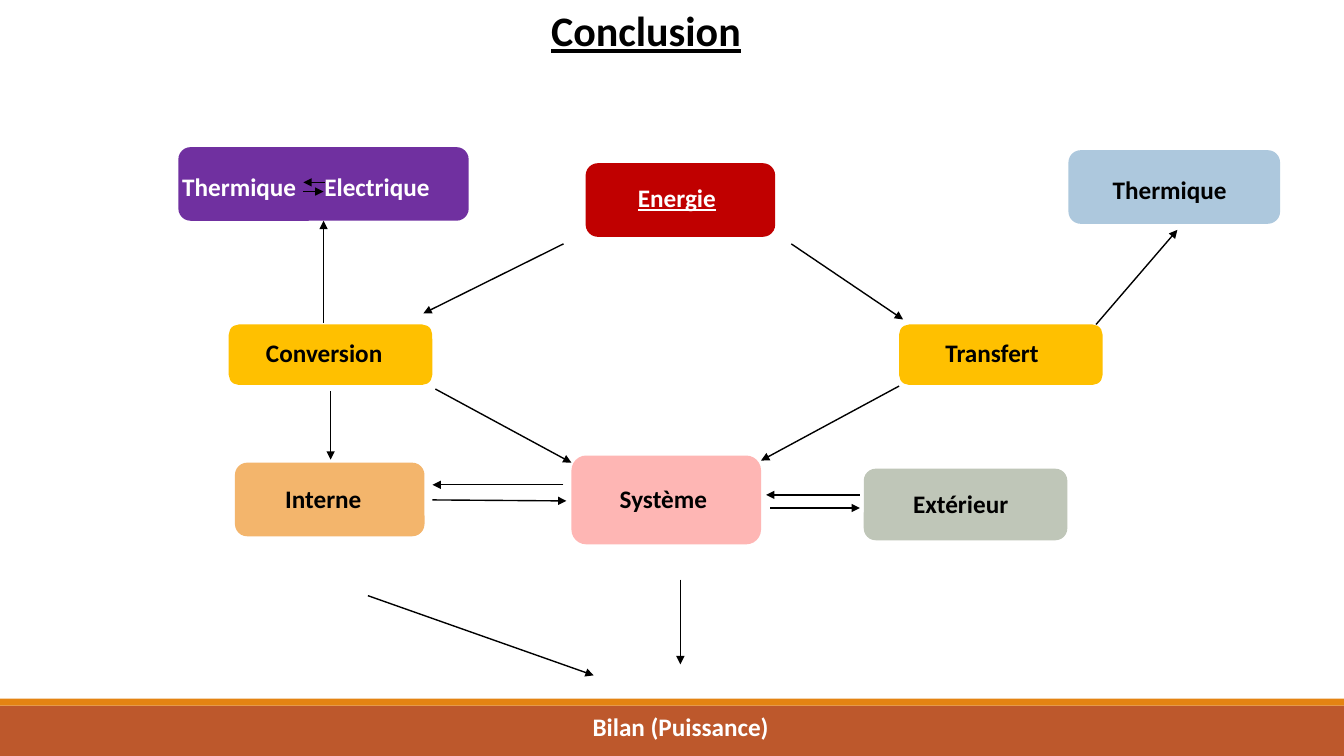
from pptx import Presentation
from pptx.util import Pt
from pptx.dml.color import RGBColor
from pptx.enum.shapes import MSO_CONNECTOR, MSO_SHAPE
from lxml import etree

LINE = MSO_CONNECTOR.STRAIGHT
RECT = MSO_SHAPE.RECTANGLE
ROUND = MSO_SHAPE.ROUNDED_RECTANGLE
NS = "http://schemas.openxmlformats.org/drawingml/2006/main"
FONT = "Calibri"
WIDE, HIGH = 960, 540
TEXT_H = 28.8

HEX = {
    "black": "000000", "white": "FFFFFF", "rust": "BD582C",
    "orange": "E48312", "purple": "7030A0", "red": "C00000",
    "peach": "F3B56C", "blue": "ADC8DD", "sage": "BFC6B8",
    "pink": "FEB6B4", "gold": "FFC000",
}

# Footer bars: fill, top, height
BARS = [("rust", 504, 36), ("orange", 499, 5)]

# Nodes: text, fill, ink, box (left, top, width, height), label (left, top, width)
NODES = [
    ("Thermique\tElectrique", "purple", "white",
     (127.4, 105.1, 207.4, 52.6), (123.1, 118.8, 263.5)),
    ("Energie", "red", "white",
     (418.3, 116.6, 135.4, 52.6), (448.6, 126.7, 115.2)),
    ("Thermique", "blue", "black",
     (763.2, 107.3, 151.2, 52.6), (787.7, 121, 142.6)),
    ("Conversion", "gold", "black",
     (163.4, 231.8, 145.4, 43.2), (182.9, 237.6, 159.1)),
    ("Transfert", "gold", "black",
     (642.2, 231.8, 145.4, 43.2), (668.2, 237.6, 159.1)),
    ("Interne", "peach", "black",
     (167.8, 330.5, 135.4, 52.6), (196.6, 342, 159.1)),
    ("Système", "pink", "black",
     (408.2, 325.4, 135.4, 63.4), (435.6, 342, 100.8)),
    ("Extérieur", "sage", "black",
     (617, 334.8, 145.4, 51.1), (645.1, 345.6, 145.4)),
]

# Arrows: start x, start y, end x, end y
ARROWS = [
    (402.5, 174.2, 302.4, 223.9),    # Energie to Conversion
    (565.2, 174.2, 645.1, 228.2),    # Energie to Transfert
    (782.9, 231.8, 841, 164.2),      # Transfert to Thermique
    (236.2, 279.4, 236.2, 328.3),    # Conversion to Interne
    (311, 277.9, 408.2, 330.5),      # Conversion to Système
    (642.2, 275.8, 543.6, 329),      # Transfert to Système
    (402.5, 346.3, 308.9, 346.3),    # Système and Interne
    (308.9, 357.1, 404.6, 357.8),
    (614.2, 353.5, 547.2, 353.5),    # Système and Extérieur
    (550.1, 362.9, 614.2, 362.9),
    (262.8, 425.5, 424.1, 482.4),    # down to Bilan
    (486, 414, 486, 474.5),
    (231.8, 130.3, 216.7, 130.3),    # Thermique and Electrique
    (216.7, 136.8, 231.1, 136.8),
]
RISE = (231.1, 230.4, 231.1, 157.7)  # Conversion to Thermique/Electrique
TAB = 101.5

deck = Presentation()
deck.slide_width, deck.slide_height = Pt(WIDE), Pt(HIGH)
slide = deck.slides.add_slide(deck.slide_layouts[6])
shapes = slide.shapes


def color(name):
    return RGBColor.from_string(HEX[name])


def add_box(kind, fill, box):
    shape = shapes.add_shape(kind, *map(Pt, box))
    shape.shadow.inherit = False
    shape.fill.solid()
    shape.fill.fore_color.rgb = color(fill)
    shape.line.fill.background()
    return shape


def add_text(text, ink, left, top, width, size=18, high=TEXT_H, under=False):
    frame = shapes.add_textbox(Pt(left), Pt(top), Pt(width), Pt(high)).text_frame
    frame.word_wrap = True
    para = frame.paragraphs[0]
    para.text = text
    font = para.font
    font.name, font.size, font.bold = FONT, Pt(size), True
    font.color.rgb = color(ink)
    if under:
        font.underline = True
    return para


def add_arrow(x1, y1, x2, y2):
    arrow = shapes.add_connector(LINE, Pt(x1), Pt(y1), Pt(x2), Pt(y2))
    arrow.line.color.rgb = color("black")
    arrow.line.width = Pt(1)
    ln = arrow.line._get_or_add_ln()
    etree.SubElement(ln, f"{{{NS}}}tailEnd", type="triangle")
    etree.SubElement(arrow._element.spPr, f"{{{NS}}}effectLst")
    return arrow


# Footer and title
for fill, top, high in BARS:
    add_box(RECT, fill, (0, top, WIDE, high))
add_text("Conclusion", "black", 386.6, 0, 296.6, 30, 43.9, True)
add_text("Bilan (Puissance)", "white", 416.2, 504.7, 150.5)

# Nodes with their labels
boxes = []
for text, fill, ink, box, label in NODES:
    boxes.append(add_box(ROUND, fill, box))
    para = add_text(text, ink, *label, under=text == "Energie")
    if "\t" in text:
        tabs = etree.SubElement(para._p.get_or_add_pPr(), f"{{{NS}}}tabLst")
        etree.SubElement(tabs, f"{{{NS}}}tab", pos=str(int(Pt(TAB))), algn="l")

# Arrows
for ends in ARROWS:
    add_arrow(*ends)
add_arrow(*RISE).end_connect(boxes[0], 2)

deck.save("out.pptx")
